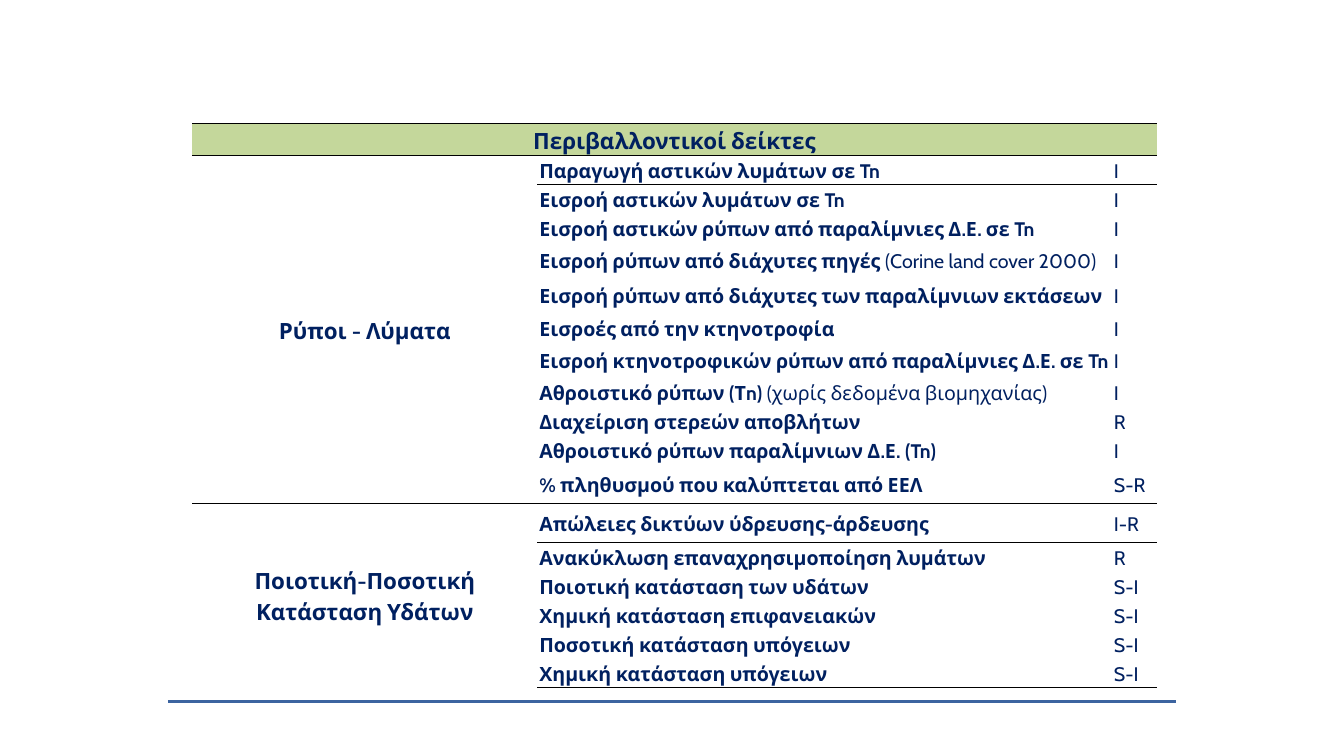
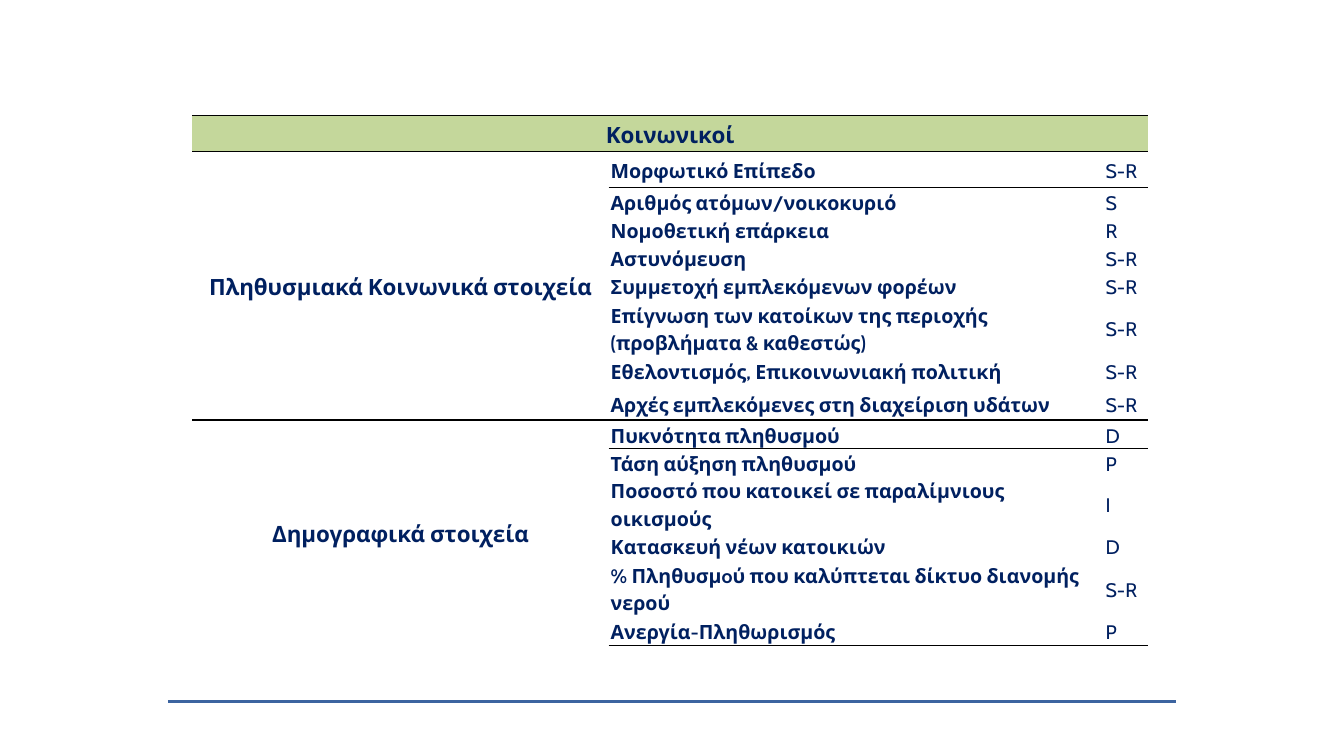
from lxml import etree
from pptx import Presentation
from pptx.dml.color import RGBColor
from pptx.enum.shapes import MSO_CONNECTOR
from pptx.enum.text import MSO_ANCHOR, PP_ALIGN
from pptx.oxml.ns import qn
from pptx.util import Cm, Pt

STRAIGHT = MSO_CONNECTOR.STRAIGHT
MIDDLE = MSO_ANCHOR.MIDDLE
LEFT, CENTER = PP_ALIGN.LEFT, PP_ALIGN.CENTER

NAVY = RGBColor(0x00, 0x20, 0x60)
GREEN = RGBColor(0xC4, 0xD7, 0x9B)
BLUE = RGBColor(0x3C, 0x64, 0xA0)
BLACK = RGBColor(0x00, 0x00, 0x00)
FONT = "Cabin"
PLAIN = "{2D5ABB26-0587-4C30-8999-92F81FD0307C}"
EDGE = Cm(4.85)
INSET = Cm(0.05)

# rows: label, code, height, note
SLIDES = [
    {
        "title": "Περιβαλλοντικοί δείκτες",
        "top": 3.12,
        "head": 0.79,
        "cols": (8.69, 14.48, 1.13),
        "groups": [
            ("Ρύποι - Λύματα", [
                ("Παραγωγή αστικών λυμάτων σε Tn", "I", 0.73, ""),
                ("Εισροή αστικών λυμάτων σε Tn", "I", 0.73, ""),
                ("Εισροή αστικών ρύπων από παραλίμνιες Δ.Ε. σε Tn", "I", 0.73, ""),
                ("Εισροή ρύπων από διάχυτες πηγές ", "I", 0.89,
                 "(Corine land cover 2000)"),
                ("Εισροή ρύπων από διάχυτες των παραλίμνιων εκτάσεων", "I", 0.89, ""),
                ("Εισροές από την κτηνοτροφία", "I", 0.73, ""),
                ("Εισροή κτηνοτροφικών ρύπων από παραλίμνιες Δ.Ε. σε Tn", "I", 0.89, ""),
                ("Αθροιστικό ρύπων (Τn) ", "I", 0.73, "(χωρίς δεδομένα βιομηχανίας)"),
                ("Διαχείριση στερεών αποβλήτων", "R", 0.73, ""),
                ("Αθροιστικό ρύπων παραλίμνιων Δ.Ε. (Tn)", "I", 0.73, ""),
                ("% πληθυσμού που καλύπτεται από ΕΕΛ", "S-R", 0.99, ""),
            ]),
            ("Ποιοτική-Ποσοτική Κατάσταση Υδάτων", [
                ("Απώλειες δικτύων ύδρευσης-άρδευσης", "I-R", 0.99, ""),
                ("Ανακύκλωση επαναχρησιμοποίηση λυμάτων", "R", 0.73, ""),
                ("Ποιοτική κατάσταση των υδάτων", "S-I", 0.73, ""),
                ("Χημική κατάσταση επιφανειακών", "S-I", 0.73, ""),
                ("Ποσοτική κατάσταση υπόγειων", "S-I", 0.73, ""),
                ("Χημική κατάσταση υπόγειων", "S-I", 0.73, ""),
            ]),
        ],
    },
    {
        "title": "Κοινωνικοί",
        "top": 2.92,
        "head": 0.89,
        "cols": (10.49, 12.47, 1.12),
        "groups": [
            ("Πληθυσμιακά Κοινωνικά στοιχεία", [
                ("Μορφωτικό Επίπεδο", "S-R", 0.91, ""),
                ("Αριθμός ατόμων/νοικοκυριό", "S", 0.71, ""),
                ("Νομοθετική επάρκεια", "R", 0.71, ""),
                ("Αστυνόμευση", "S-R", 0.69, ""),
                ("Συμμετοχή εμπλεκόμενων φορέων", "S-R", 0.74, ""),
                ("Επίγνωση των κατοίκων της περιοχής (προβλήματα & καθεστώς)",
                 "S-R", 1.37, ""),
                ("Εθελοντισμός, Επικοινωνιακή πολιτική", "S-R", 0.79, ""),
                ("Αρχές εμπλεκόμενες στη διαχείριση υδάτων", "S-R", 0.84, ""),
            ]),
            ("Δημογραφικά στοιχεία", [
                ("Πυκνότητα πληθυσμού", "D", 0.71, ""),
                ("Τάση αύξηση πληθυσμού", "P", 0.71, ""),
                ("Ποσοστό που κατοικεί σε παραλίμνιους οικισμούς", "I", 0.71, ""),
                ("Κατασκευή νέων κατοικιών", "D", 0.71, ""),
                ("% Πληθυσμoύ που καλύπτεται δίκτυο διανομής νερού", "S-R", 1.45, ""),
                ("Ανεργία-Πληθωρισμός", "P", 0.71, ""),
            ]),
        ],
    },
]


def add_rule(slide):
    rule = slide.shapes.add_connector(STRAIGHT, Cm(4.23), Cm(17.68), Cm(29.63), Cm(17.68))
    rule.line.color.rgb = BLUE
    rule.line.width = Pt(2)
    etree.SubElement(rule._element.spPr, qn("a:effectLst"))


def add_border(cell, side):
    line = etree.SubElement(cell._tc.get_or_add_tcPr(), qn("a:" + side), w=str(Pt(1)))
    fill = etree.SubElement(line, qn("a:solidFill"))
    etree.SubElement(fill, qn("a:srgbClr"), val=str(BLACK))


def write(cell, text, size, align=LEFT, bold=True, note=""):
    para = cell.text_frame.paragraphs[0]
    para.alignment = align
    para.line_spacing = 1.15
    font = para.font
    font.name, font.size, font.color.rgb = FONT, Pt(size), NAVY
    parts = [(text, bold), (note, False)] if note else [(text, bold)]
    for words, heavy in parts:
        run = para.add_run()
        run.text = words
        run.font.name, run.font.size, run.font.bold = FONT, Pt(size), heavy
        run.font.color.rgb = NAVY


def add_grid(slide, data):
    items = [item for _, group in data["groups"] for item in group]
    sizes = [data["head"]] + [item[2] for item in items]
    cols = data["cols"]
    frame = slide.shapes.add_table(len(sizes), len(cols), EDGE, Cm(data["top"]),
                                   Cm(sum(cols)), Cm(sum(sizes)))
    table = frame.table
    table.first_row = table.horz_banding = False
    table._tbl.tblPr.find(qn("a:tableStyleId")).text = PLAIN
    for col, width in zip(table.columns, cols):
        col.width = Cm(width)
    for row, height in zip(table.rows, sizes):
        row.height = Cm(height)

    starts, lasts = [0], [0]
    for _, group in data["groups"]:
        starts.append(lasts[-1] + 1)
        lasts.append(lasts[-1] + len(group))
    for i, row in enumerate(table.rows):
        for cell in row.cells:
            cell.vertical_anchor = MIDDLE
            cell.margin_left = cell.margin_right = INSET
            cell.margin_top = cell.margin_bottom = 0
            if i in starts:
                add_border(cell, "lnT")
            if i in lasts:
                add_border(cell, "lnB")
            if i == 0:
                cell.fill.solid()
                cell.fill.fore_color.rgb = GREEN
            else:
                cell.fill.background()

    table.cell(0, 0).merge(table.cell(0, len(cols) - 1))
    write(table.cell(0, 0), data["title"], 16, CENTER)
    for (name, _), first, last in zip(data["groups"], starts[1:], lasts[1:]):
        table.cell(first, 0).merge(table.cell(last, 0))
        write(table.cell(first, 0), name, 16, CENTER)
    for i, (label, code, _, note) in enumerate(items, 1):
        write(table.cell(i, 1), label, 14, note=note)
        write(table.cell(i, 2), code, 14, bold=False)


def main():
    deck = Presentation()
    deck.slide_width, deck.slide_height = Cm(33.87), Cm(19.05)
    for data in SLIDES:
        slide = deck.slides.add_slide(deck.slide_layouts[6])
        add_rule(slide)
        add_grid(slide, data)
    deck.save("out.pptx")


if __name__ == "__main__":
    main()
